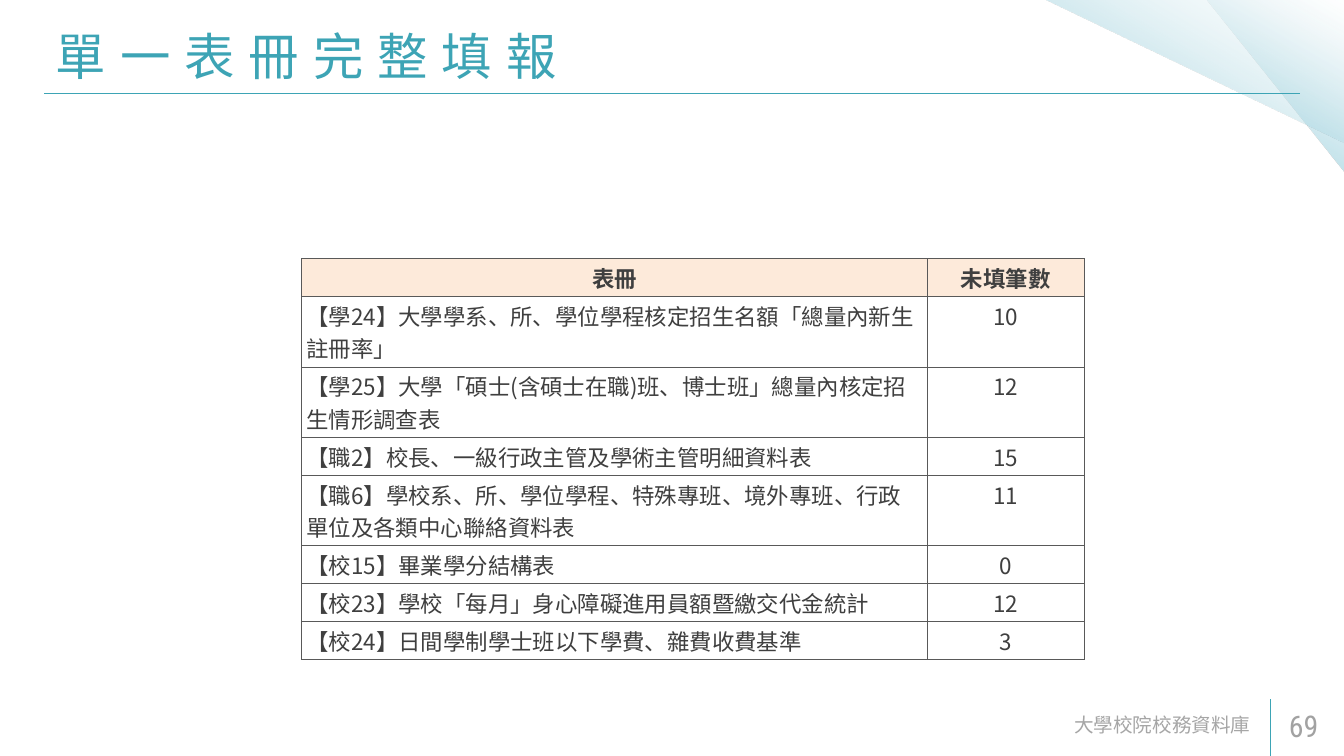
from dataclasses import dataclass

from pptx import Presentation
from pptx.dml.color import RGBColor
from pptx.enum.shapes import MSO_CONNECTOR, MSO_SHAPE
from pptx.enum.text import MSO_ANCHOR, MSO_AUTO_SIZE, PP_ALIGN
from pptx.oxml import parse_xml
from pptx.oxml.ns import nsdecls
from pptx.util import Pt


@dataclass(frozen=True)
class Theme:
    accent: str = "3DA4B5"
    footer: str = "A6A6A6"
    number: str = "A2A2A2"
    cell_text: str = "3F3F3F"
    header_fill: str = "FDEADA"
    border: str = "595959"
    gradient: tuple = ((0, "97D1E0", 100), (50, "AAD7E2", 44), (100, "E0F0F4", 0))
    title_font: str = "Roboto Condensed"
    footer_font: str = "Roboto"
    table_font: str = "Noto Sans CJK SC"
    title_size: int = 54
    number_size: int = 32
    table_size: int = 24
    footer_size: int = 21


class SlideBuilder:
    def __init__(self, presentation, theme):
        self.theme = theme
        self.slide = presentation.slides.add_slide(presentation.slide_layouts[5])

    def style(self, paragraph, name, size, color, align=PP_ALIGN.LEFT, bold=False):
        paragraph.alignment = align
        paragraph.font.name = name
        paragraph.font.size = Pt(size)
        paragraph.font.bold = bold
        paragraph.font.color.rgb = RGBColor.from_string(color)

    def fill_frame(self, shape, text):
        frame = shape.text_frame
        frame.text = text
        frame.word_wrap = True
        frame.auto_size = MSO_AUTO_SIZE.NONE
        frame.vertical_anchor = MSO_ANCHOR.MIDDLE
        frame.margin_left = frame.margin_right = Pt(13)
        frame.margin_top = frame.margin_bottom = Pt(6.5)
        return frame.paragraphs[0]

    def triangle(self, left, top, width, height):
        shape = self.slide.shapes.add_shape(
            MSO_SHAPE.RIGHT_TRIANGLE, Pt(left), Pt(top), Pt(width), Pt(height))
        shape.rotation = 180
        shape.shadow.inherit = False
        shape.line.fill.background()
        shape.fill.background()
        stops = "".join(
            f'<a:gs pos="{position * 1000}"><a:srgbClr val="{color}">'
            f'<a:alpha val="{alpha * 1000}"/></a:srgbClr></a:gs>'
            for position, color, alpha in self.theme.gradient)
        gradient = parse_xml(
            f'<a:gradFill {nsdecls("a")} rotWithShape="1"><a:gsLst>{stops}</a:gsLst>'
            '<a:lin ang="7200000" scaled="0"/></a:gradFill>')
        properties = shape.element.spPr
        properties.replace(properties.find("{*}noFill"), gradient)

    def line(self, start_x, start_y, end_x, end_y):
        connector = self.slide.shapes.add_connector(
            MSO_CONNECTOR.STRAIGHT, Pt(start_x), Pt(start_y), Pt(end_x), Pt(end_y))
        connector.line.color.rgb = RGBColor.from_string(self.theme.accent)
        connector.line.width = Pt(1)
        connector.element.spPr.append(parse_xml(f'<a:effectLst {nsdecls("a")}/>'))

    def title(self, text, left, top, width, height):
        shape = self.slide.shapes.title
        shape.left, shape.top, shape.width, shape.height = (
            Pt(left), Pt(top), Pt(width), Pt(height))
        paragraph = self.fill_frame(shape, text)
        self.style(paragraph, self.theme.title_font, self.theme.title_size, self.theme.accent)
        paragraph.runs[0].font._element.set("spc", "1500")

    def label(self, text, left, top, width, height, name, size, color, align=PP_ALIGN.LEFT):
        shape = self.slide.shapes.add_textbox(Pt(left), Pt(top), Pt(width), Pt(height))
        self.style(self.fill_frame(shape, text), name, size, color, align)

    def cell(self, cell, text, align, header):
        theme = self.theme
        cell.text = text
        cell.margin_left = cell.margin_right = Pt(5)
        cell.margin_top = cell.margin_bottom = Pt(2.9)
        self.style(cell.text_frame.paragraphs[0], theme.table_font, theme.table_size,
                   theme.cell_text, align, header)
        if header:
            cell.fill.solid()
            cell.fill.fore_color.rgb = RGBColor.from_string(theme.header_fill)
        else:
            cell.fill.background()
        properties = cell._tc.get_or_add_tcPr()
        for index, side in enumerate("LRTB"):
            properties.insert(index, parse_xml(
                f'<a:ln{side} {nsdecls("a")} w="{Pt(1)}"><a:solidFill>'
                f'<a:srgbClr val="{theme.border}"/></a:solidFill></a:ln{side}>'))

    def table(self, rows, left, top, column_widths, row_heights):
        table = self.slide.shapes.add_table(
            len(rows), len(column_widths), Pt(left), Pt(top),
            Pt(sum(column_widths)), Pt(sum(row_heights))).table
        table.horz_banding = False
        for column, width in zip(table.columns, column_widths):
            column.width = Pt(width)
        for row_index, values in enumerate(rows):
            table.rows[row_index].height = Pt(row_heights[row_index])
            header = row_index == 0
            for column_index, text in enumerate(values):
                centred = header or column_index == 1
                align = PP_ALIGN.CENTER if centred else PP_ALIGN.LEFT
                self.cell(table.cell(row_index, column_index), text, align, header)


FORMS = [
    ("表冊", "未填筆數"),
    ("【學24】大學學系、所、學位學程核定招生名額「總量內新生註冊率」", "10"),
    ("【學25】大學「碩士(含碩士在職)班、博士班」總量內核定招生情形調查表", "12"),
    ("【職2】校長、一級行政主管及學術主管明細資料表", "15"),
    ("【職6】學校系、所、學位學程、特殊專班、境外專班、行政單位及各類中心聯絡資料表", "11"),
    ("【校15】畢業學分結構表", "0"),
    ("【校23】學校「每月」身心障礙進用員額暨繳交代金統計", "12"),
    ("【校24】日間學制學士班以下學費、雜費收費基準", "3"),
]
ONE_LINE, TWO_LINES = 33.8, 63.4


def main():
    presentation = Presentation()
    presentation.slide_width, presentation.slide_height = Pt(1440), Pt(810)
    theme = Theme()
    builder = SlideBuilder(presentation, theme)
    builder.triangle(1293.1, 0, 146.9, 185)
    builder.triangle(1118.9, 0, 322.6, 153.4)
    builder.line(47.5, 100, 1392.5, 100)
    builder.line(1361.5, 810, 1361.5, 748.8)
    builder.title("單一表冊完整填報", 46.8, 15.1, 1318.3, 88.6)
    builder.label("大學校院校務資料庫", 740.9, 755.3, 612, 43.2, theme.footer_font,
                  theme.footer_size, theme.footer, PP_ALIGN.RIGHT)
    builder.label("69", 1368, 755.3, 71.3, 43.2, theme.title_font,
                  theme.number_size, theme.number)
    heights = [TWO_LINES if len(name) > 30 else ONE_LINE for name, _ in FORMS]
    builder.table(FORMS, 323.3, 277.2, (670.3, 167.8), heights)
    presentation.save("out.pptx")


if __name__ == "__main__":
    main()
